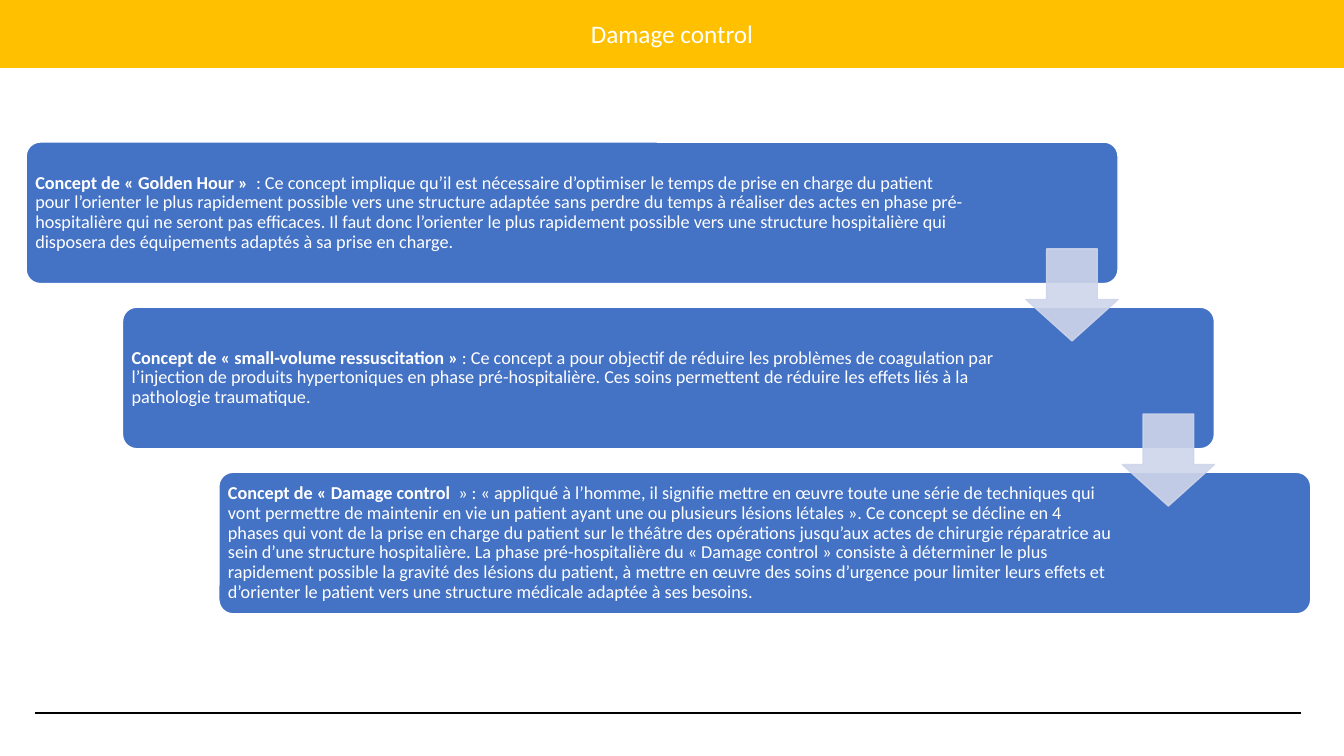
from dataclasses import dataclass

from lxml import etree
from pptx import Presentation
from pptx.dml.color import RGBColor
from pptx.enum.shapes import MSO_CONNECTOR, MSO_SHAPE
from pptx.enum.text import MSO_ANCHOR, PP_ALIGN
from pptx.oxml.ns import qn
from pptx.util import Inches, Pt

RECTANGLE = MSO_SHAPE.RECTANGLE
ROUNDED = MSO_SHAPE.ROUNDED_RECTANGLE
DOWN_ARROW = MSO_SHAPE.DOWN_ARROW
STRAIGHT = MSO_CONNECTOR.STRAIGHT
MIDDLE = MSO_ANCHOR.MIDDLE
LEFT, CENTER = PP_ALIGN.LEFT, PP_ALIGN.CENTER

SLIDE_WIDTH, SLIDE_HEIGHT = 13.33, 7.5


@dataclass(frozen=True)
class Theme:
    font: str = "Calibri"
    banner: str = "FFC000"
    card: str = "4472C4"
    arrow: str = "CFD5EA"
    light: str = "FFFFFF"
    rule: str = "000000"
    title_size: float = 18
    body_size: float = 13
    arrow_opacity: int = 90


@dataclass(frozen=True)
class Box:
    left: float
    top: float
    width: float
    height: float

    def inches(self):
        return [Inches(value) for value in (self.left, self.top, self.width, self.height)]

    def inset(self, margin, width_share):
        return Box(self.left + margin, self.top + margin,
                   self.width * width_share, self.height - 2 * margin)


THEME = Theme()
CARD_WIDTH_SHARE, CARD_HEIGHT_SHARE = 0.85, 0.3
ARROW_SHARE = 0.65

CONCEPTS = [
    ("Concept de « Golden Hour » ",
     " : Ce concept implique qu’il est nécessaire d’optimiser le temps de prise en charge "
     "du patient pour l’orienter le plus rapidement possible vers une structure adaptée sans "
     "perdre du temps à réaliser des actes en phase pré-hospitalière qui ne seront pas "
     "efficaces. Il faut donc l’orienter le plus rapidement possible vers une structure "
     "hospitalière qui disposera des équipements adaptés à sa prise en charge.",
     0.86),
    ("Concept de « small-volume ressuscitation »",
     " : Ce concept a pour objectif de réduire les problèmes de coagulation par l’injection "
     "de produits hypertoniques en phase pré-hospitalière. Ces soins permettent de réduire "
     "les effets liés à la pathologie traumatique.",
     0.82),
    ("Concept de « Damage control ",
     " » : « appliqué à l’homme, il signifie mettre en œuvre toute une série de techniques "
     "qui vont permettre de maintenir en vie un patient ayant une ou plusieurs lésions "
     "létales ». Ce concept se décline en 4 phases qui vont de la prise en charge du patient "
     "sur le théâtre des opérations jusqu’aux actes de chirurgie réparatrice au sein d’une "
     "structure hospitalière. La phase pré-hospitalière du « Damage control » consiste à "
     "déterminer le plus rapidement possible la gravité des lésions du patient, à mettre en "
     "œuvre des soins d’urgence pour limiter leurs effets et d’orienter le patient vers une "
     "structure médicale adaptée à ses besoins.",
     0.82),
]


def write_text(shape, runs, size, align=LEFT, margin=0.05, line_spacing=1.0, space_after=0):
    frame = shape.text_frame
    frame.word_wrap = True
    frame.vertical_anchor = MIDDLE
    frame.margin_left = frame.margin_right = Inches(margin)
    frame.margin_top = frame.margin_bottom = Inches(margin)
    paragraph = frame.paragraphs[0]
    paragraph.alignment = align
    paragraph.line_spacing = line_spacing
    paragraph.space_after = Pt(space_after)
    for text, bold in runs:
        run = paragraph.add_run()
        run.text = text
        run.font.name = THEME.font
        run.font.size = Pt(size)
        run.font.bold = bold
        run.font.color.rgb = RGBColor.from_string(THEME.light)


def add_filled_shape(slide, kind, box, fill, line, adjustments=(), opacity=100):
    shape = slide.shapes.add_shape(kind, *box.inches())
    shape.shadow.inherit = False
    shape.fill.solid()
    shape.fill.fore_color.rgb = RGBColor.from_string(fill)
    shape.line.color.rgb = RGBColor.from_string(line)
    shape.line.width = Pt(1)
    for index, value in enumerate(adjustments):
        shape.adjustments[index] = value
    if opacity < 100:
        for color in shape.element.spPr.iter(qn("a:srgbClr")):
            etree.SubElement(color, qn("a:alpha")).set("val", str(opacity * 1000))
    return shape


def draw_banner(slide, box, title):
    banner = add_filled_shape(slide, RECTANGLE, box, THEME.banner, THEME.banner)
    write_text(banner, [(title, False)], THEME.title_size, align=CENTER)


def draw_footer_rule(slide, box):
    left, top, width, height = box.inches()
    rule = slide.shapes.add_connector(STRAIGHT, left, top, left + width, top + height)
    rule.line.color.rgb = RGBColor.from_string(THEME.rule)
    rule.line.width = Pt(1.5)
    etree.SubElement(rule.element.spPr, qn("a:effectLst"))


def draw_card(slide, box, heading, body, text_share):
    add_filled_shape(slide, ROUNDED, box, THEME.card, THEME.light, [0.1])
    text_box = slide.shapes.add_textbox(*box.inset(0.04, text_share).inches())
    write_text(text_box, [(heading, True), (body, False)], THEME.body_size,
               line_spacing=0.9, space_after=4.5)


def draw_step_arrow(slide, card):
    side = card.height * ARROW_SHARE
    box = Box(card.left + card.width - side, card.top + card.height * 0.755, side, side)
    add_filled_shape(slide, DOWN_ARROW, box, THEME.arrow, THEME.arrow,
                     [0.55, 0.45], THEME.arrow_opacity)


def draw_staircase(slide, box, concepts):
    width, height = box.width * CARD_WIDTH_SHARE, box.height * CARD_HEIGHT_SHARE
    steps = len(concepts) - 1
    step_x, step_y = (box.width - width) / steps, (box.height - height) / steps
    cards = [Box(box.left + index * step_x, box.top + index * step_y, width, height)
             for index in range(len(concepts))]
    for card, (heading, body, text_share) in zip(cards, concepts):
        draw_card(slide, card, heading, body, text_share)
    for card in cards[:-1]:
        draw_step_arrow(slide, card)


def main():
    presentation = Presentation()
    presentation.slide_width = Inches(SLIDE_WIDTH)
    presentation.slide_height = Inches(SLIDE_HEIGHT)
    slide = presentation.slides.add_slide(presentation.slide_layouts[6])
    draw_banner(slide, Box(0, 0, SLIDE_WIDTH, 0.67), "Damage control")
    draw_footer_rule(slide, Box(0.35, 7.07, 12.55, 0))
    draw_staircase(slide, Box(0.26, 1.41, 12.74, 4.68), CONCEPTS)
    presentation.save("out.pptx")


if __name__ == "__main__":
    main()
